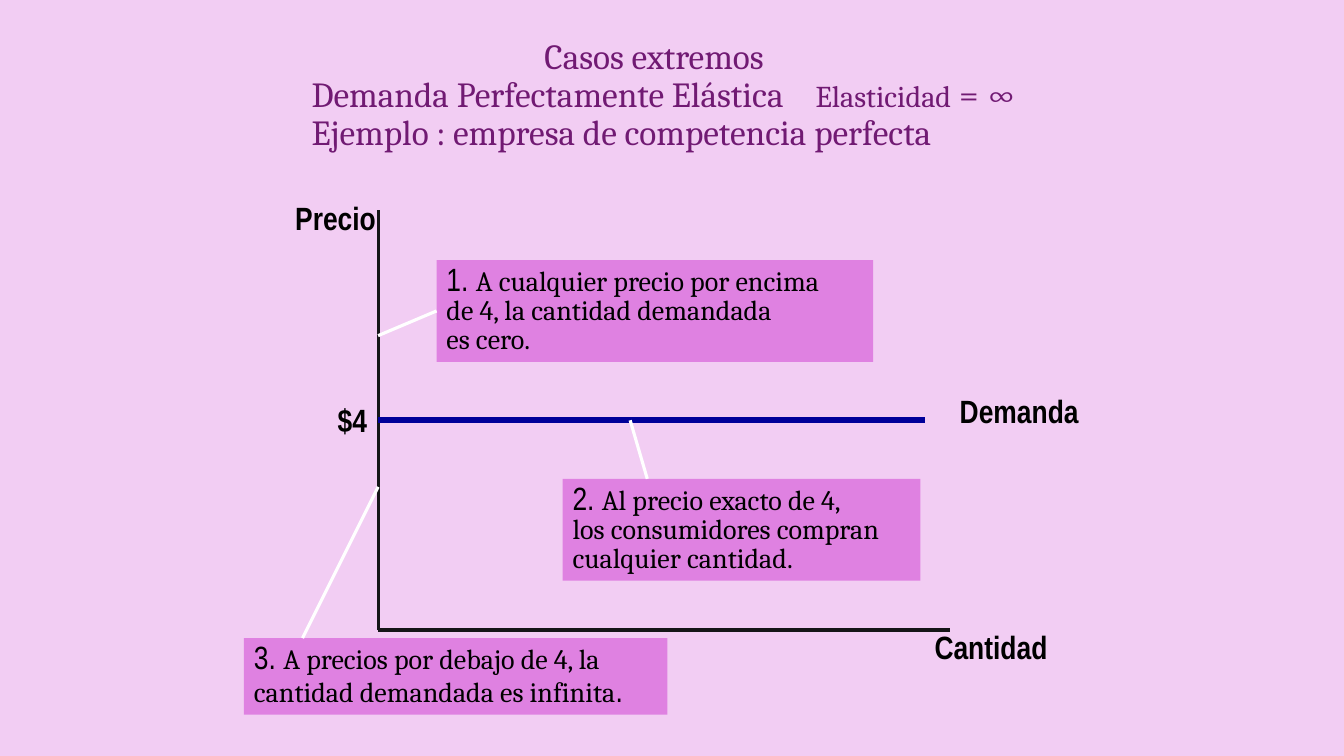
import pptx
import pptx.util
import pptx.dml.color
import pptx.enum.shapes
import pptx.enum.text
import pptx.oxml
import pptx.oxml.ns

Inches = pptx.util.Inches
Pt = pptx.util.Pt
ALIGN = pptx.enum.text.PP_ALIGN
ANCHOR = pptx.enum.text.MSO_ANCHOR

THEME = {
    "background": "F2CDF3", "axis": "151517", "demand": "000099",
    "pointer": "FFFFFF", "callout": "DF81E1",
    "title": {"name": "Cambria", "size": 25.2, "color": "711A73"},
    "title_small": {"name": "Cambria", "size": 21.6, "color": "711A73"},
    "label": {"name": "Arial Narrow", "size": 23, "bold": True, "color": "000000"},
    "number": {"name": "Arial Narrow", "size": 23, "color": "000000"},
    "body": {"name": "Cambria", "size": 20, "color": "000000"},
}

# Each line of text is a list of (text, style) runs.
TITLE_BOX = (2.99, 0.42, 9.31, 1.07)
TITLE_INDENTS = (2.31, 0, 0)
TITLE_TAB = 5.25
TITLE = [
    [("Casos extremos", "title")],
    [("Demanda Perfectamente Elástica\t", "title"),
     ("Elasticidad", "title_small"), (" = ∞", "title")],
    [("Ejemplo : empresa de competencia perfecta", "title")],
]

ORIGIN = (3.75, 6.25)
AXIS_TOP, AXIS_RIGHT = 2.08, 9.42
PRICE_LEVEL, DEMAND_END = 4.17, 9.17

LABELS = [
    ("Cantidad", (9.17, 6.17, 1.32, 0.48)),
    ("Precio", (2.83, 1.92, 1, 0.48)),
    ("Demanda", (9.42, 3.83, 1.38, 0.48)),
    ("$4", (3.25, 3.92, 0.49, 0.48)),
]

CALLOUTS = [
    {"box": (4.33, 2.58, 4.33, 1.01), "target": (ORIGIN[0], 3.33),
     "start": (4.33, 3.08), "side": 1,
     "lines": [[("1. ", "number"), ("A cualquier precio por encima", "body")],
               [("de 4, la cantidad demandada", "body")],
               [("es cero.", "body")]]},
    {"box": (5.58, 4.75, 3.55, 1.01), "target": (6.25, PRICE_LEVEL),
     "start": (6.42, 4.75), "side": None,
     "lines": [[("2. ", "number"), ("Al precio exacto de 4,", "body")],
               [("los consumidores compran", "body")],
               [("cualquier cantidad.", "body")]]},
    {"box": (2.42, 6.33, 4.2, 0.76), "target": (ORIGIN[0], 4.83),
     "start": (3, 6.33), "side": None,
     "lines": [[("3. ", "number"), ("A precios por debajo de 4, la", "body")],
               [("cantidad demandada es infinita", "body"), (".", "number")]]},
]


def color(name):
    return pptx.dml.color.RGBColor.from_string(name)


def inches(values):
    return [Inches(value) for value in values]


def write_lines(frame, lines, line_spacing=1.0, anchor=ANCHOR.TOP, wrap=True):
    """Fill a text frame, one paragraph per line."""
    settings = {"word_wrap": wrap, "vertical_anchor": anchor,
                "auto_size": pptx.enum.text.MSO_AUTO_SIZE.NONE,
                "margin_left": Inches(0.1), "margin_right": Inches(0.1),
                "margin_top": Inches(0.05), "margin_bottom": Inches(0.05)}
    for name, value in settings.items():
        setattr(frame, name, value)
    for index, line in enumerate(lines):
        paragraph = frame.add_paragraph() if index else frame.paragraphs[0]
        paragraph.alignment = ALIGN.LEFT
        paragraph.line_spacing = line_spacing
        for text, style in line:
            run = paragraph.add_run()
            run.text = text
            for name, value in THEME[style].items():
                if name == "color":
                    run.font.color.rgb = color(value)
                else:
                    setattr(run.font, name, Pt(value) if name == "size" else value)


def add_line(slide, start, end, line_color, width):
    line = slide.shapes.add_connector(
        pptx.enum.shapes.MSO_CONNECTOR.STRAIGHT, *inches(start + end))
    line.line.color.rgb = color(line_color)
    line.line.width = Pt(width)
    line._element.spPr.append(pptx.oxml.parse_xml(
        f"<a:effectLst {pptx.oxml.ns.nsdecls('a')}/>"))
    return line


def add_title(slide):
    title = slide.shapes.title
    title.left, title.top, title.width, title.height = inches(TITLE_BOX)
    write_lines(title.text_frame, TITLE, 0.9, ANCHOR.MIDDLE)
    paragraphs = title.text_frame.paragraphs
    for paragraph, indent in zip(paragraphs, TITLE_INDENTS):
        properties = paragraph._p.get_or_add_pPr()
        properties.set("marL", str(Inches(indent)))
        properties.set("indent", "0")
    paragraphs[1]._p.get_or_add_pPr().append(pptx.oxml.parse_xml(
        f"<a:tabLst {pptx.oxml.ns.nsdecls('a')}>"
        f'<a:tab pos="{Inches(TITLE_TAB)}" algn="l"/></a:tabLst>'))


def add_callout(slide, callout):
    box = slide.shapes.add_shape(
        pptx.enum.shapes.MSO_SHAPE.RECTANGLE, *inches(callout["box"]))
    box.shadow.inherit = False
    box.fill.solid()
    box.fill.fore_color.rgb = color(THEME["callout"])
    box.line.fill.background()
    write_lines(box.text_frame, callout["lines"], 0.85)
    pointer = add_line(slide, callout["start"], callout["target"], THEME["pointer"], 2.25)
    if callout["side"] is not None:
        pointer.begin_connect(box, callout["side"])


def main():
    presentation = pptx.Presentation()
    presentation.slide_width, presentation.slide_height = inches((13.33, 7.5))
    slide = presentation.slides.add_slide(presentation.slide_layouts[5])
    slide.background.fill.solid()
    slide.background.fill.fore_color.rgb = color(THEME["background"])

    add_title(slide)
    for end in ((ORIGIN[0], AXIS_TOP), (AXIS_RIGHT, ORIGIN[1])):
        add_line(slide, ORIGIN, end, THEME["axis"], 2.25)
    for text, box in LABELS:
        label = slide.shapes.add_textbox(*inches(box))
        write_lines(label.text_frame, [[(text, "label")]], wrap=False)
    add_line(slide, (ORIGIN[0], PRICE_LEVEL), (DEMAND_END, PRICE_LEVEL),
             THEME["demand"], 4.5)
    for callout in CALLOUTS:
        add_callout(slide, callout)
    presentation.save("out.pptx")


if __name__ == "__main__":
    main()
